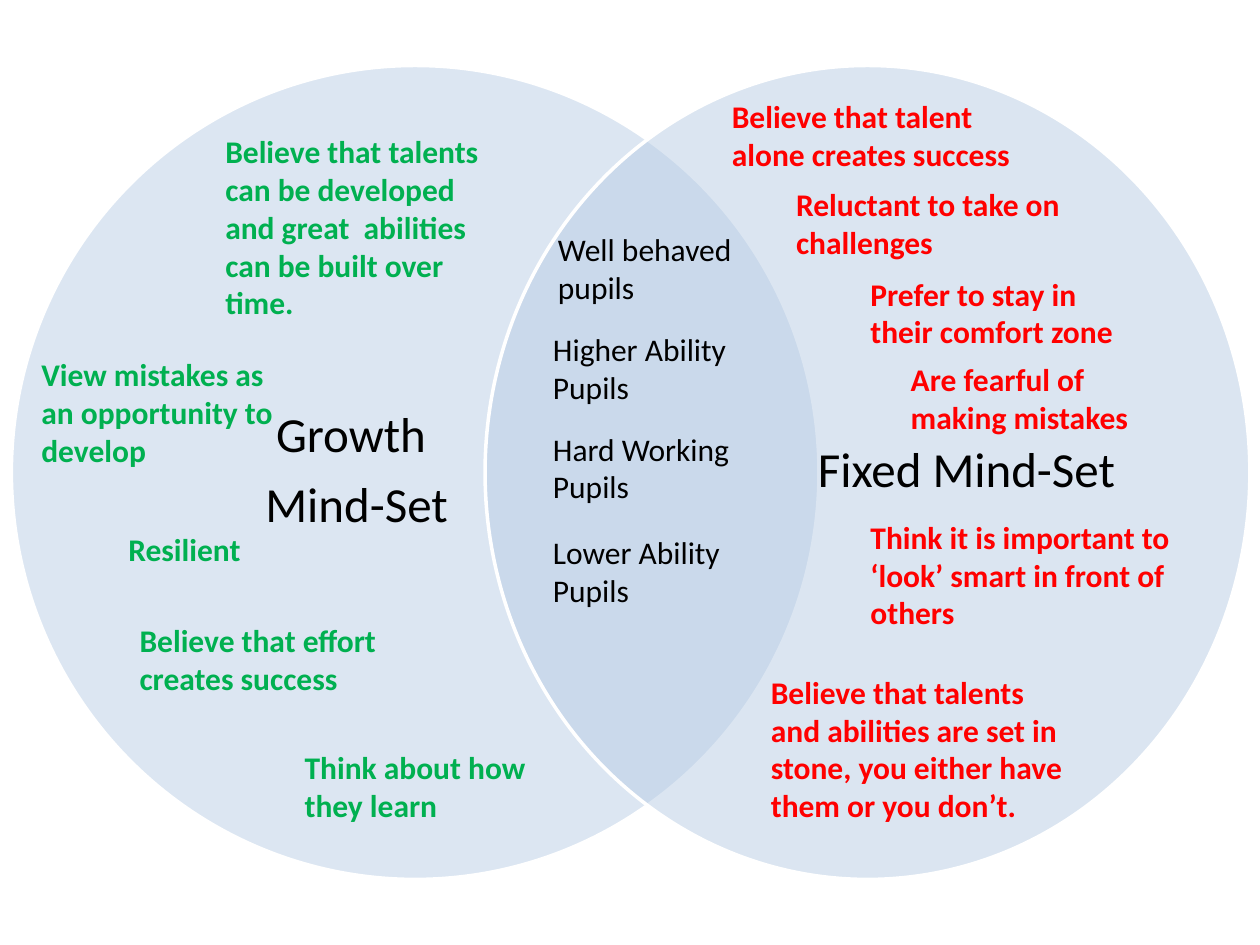
from lxml import etree
from pptx import Presentation
from pptx.dml.color import RGBColor
from pptx.enum.shapes import MSO_SHAPE as Shape
from pptx.enum.text import MSO_ANCHOR as Anchor, MSO_AUTO_SIZE as AutoSize, PP_ALIGN as Align
from pptx.oxml.ns import qn
from pptx.util import Inches, Pt

COLS, ROWS = 100, 75
CELL = Inches(10) // COLS
BLACK, GREEN, RED = "000000", "00B050", "FF0000"

LEFT = (0.9, 5.2, 64.1, 64.6)
RIGHT = (38.5, 5.2, 60.7, 64.6)
OVERLAP = (42.9, 17.8, 18.9, 31.1)

GROWTH = [
    (1.4, 22.5, 20.9, 3, "View mistakes as an opportunity to develop"),
    (22.3, 53.7, 21.3, 2, "Think about how they learn"),
    (9.2, 43.6, 22, 2, "Believe that effort creates success"),
    (8.3, 36.4, 17.1, 1, "Resilient"),
    (16, 4.8, 23.6, 5, "Believe that talents can be developed and great  abilities can be built over time."),
]
FIXED = [
    (29.6, 16.1, 22, 2, "Prefer to stay in their comfort zone"),
    (32.8, 22.9, 23.6, 2, "Are fearful of making mistakes"),
    (21.7, 47.7, 26, 4, "Believe that talents and abilities are set in stone, you either have them or you don’t."),
    (18.6, 2, 25.2, 2, "Believe that talent alone creates success"),
    (29.6, 35.4, 29.1, 3, "Think it is important to ‘look’ smart in front of others"),
    (23.7, 9, 26.4, 2, "Reluctant to take on challenges"),
]
SHARED = [
    (0.4, 0, 16.5, 2, "Well behaved pupils"),
    (0, 7.9, 18.9, 2, "Higher Ability Pupils"),
    (0, 15.8, 16.5, 2, "Hard Working Pupils"),
    (0, 24, 17.3, 2, "Lower Ability Pupils"),
]


def rgb(hex_color):
    """Turn a hex string into a colour."""
    return RGBColor.from_string(hex_color)


def cells(*values):
    """Convert grid cells to slide lengths."""
    return [round(v * CELL) for v in values]


def inside(box, x, y, w, h):
    """Move a part given relative to a box onto the slide grid."""
    return box[0] + x, box[1] + y, w, h


def add_text(s, box, text, size=18, color=BLACK, bold=False, heading=False):
    """Add a text box, one paragraph per line of text."""
    tf = s.shapes.add_textbox(*cells(*box)).text_frame
    tf.word_wrap = True
    if heading:
        tf.vertical_anchor = Anchor.MIDDLE
        tf.margin_left = tf.margin_right = tf.margin_top = tf.margin_bottom = 0
    else:
        tf.auto_size = AutoSize.SHAPE_TO_FIT_TEXT
    for i, line in enumerate(text.split("\n")):
        p = tf.add_paragraph() if i else tf.paragraphs[0]
        if heading:
            p.alignment = Align.CENTER
            p.line_spacing = 0.9
            p.space_after = Pt(0.35 * size)
        r = p.add_run()
        r.text = line
        r.font.name, r.font.size, r.font.bold = "Calibri", Pt(size), bold
        r.font.color.rgb = rgb(color)


def add_notes(s, box, notes, **fmt):
    """Place notes relative to a box, as tall as their line count."""
    for x, y, w, lines, text in notes:
        add_text(s, inside(box, x, y, w, 3 * lines + 1.1), text, **fmt)


def add_circle(s, box, fill, title, title_box, alpha=None):
    """Draw one circle of the diagram with its heading."""
    sp = s.shapes.add_shape(Shape.OVAL, *cells(*box))
    sp.shadow.inherit = False
    sp.fill.solid()
    sp.fill.fore_color.rgb = rgb(fill)
    sp.line.color.rgb = rgb("FFFFFF")
    sp.line.width = Pt(2)
    if alpha:
        color = sp.fill._xPr.find(qn("a:solidFill"))[0]
        etree.SubElement(color, qn("a:alpha")).set("val", str(alpha * 1000))
    add_text(s, inside(box, *title_box), title, size=28, heading=True)


def main():
    """Build the mind-set Venn diagram."""
    prs = Presentation()
    prs.slide_width, prs.slide_height = cells(COLS, ROWS)
    s = prs.slides.add_slide(prs.slide_layouts[6])
    add_circle(s, LEFT, "DCE6F2", "Growth \nMind-Set", (8.9, 7.6, 37, 49.3))
    add_circle(s, RIGHT, "B9CDE5", "Fixed Mind-Set", (20.7, 7.6, 35, 49.3), alpha=50)
    add_notes(s, LEFT, GROWTH, color=GREEN, bold=True)
    add_notes(s, RIGHT, FIXED, color=RED, bold=True)
    add_notes(s, OVERLAP, SHARED)
    prs.save("out.pptx")


if __name__ == "__main__":
    main()
